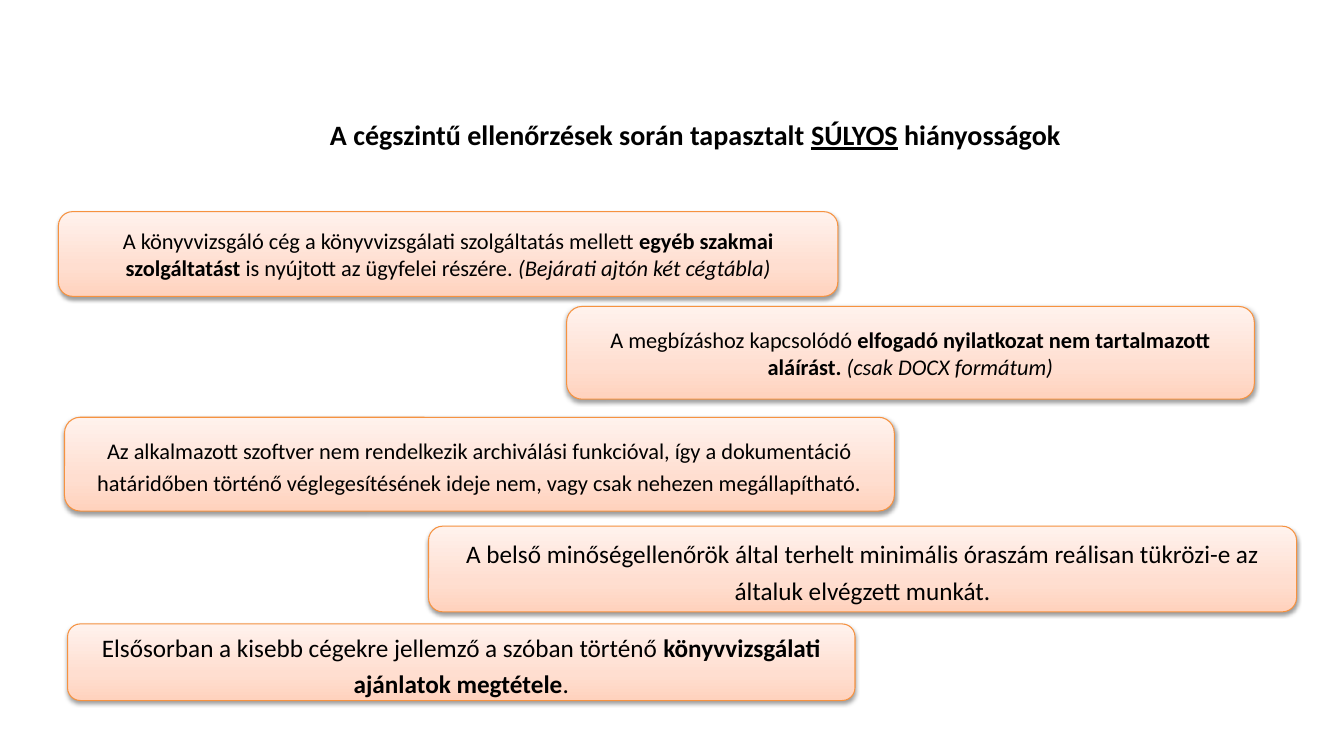
from lxml.etree import SubElement
from pptx import Presentation
from pptx.dml.color import RGBColor
from pptx.enum.shapes import MSO_SHAPE
from pptx.enum.text import MSO_ANCHOR, PP_ALIGN
from pptx.oxml.ns import qn
from pptx.util import Inches, Pt


def color(hex_code):
    return RGBColor.from_string(hex_code)


def write(shape, parts, size, spacing=1.0):
    """Fill a shape with one centred paragraph of (text, style) parts."""
    frame = shape.text_frame
    frame.word_wrap = True
    frame.vertical_anchor = MSO_ANCHOR.MIDDLE
    paragraph = frame.paragraphs[0]
    paragraph.alignment = PP_ALIGN.CENTER
    paragraph.line_spacing = spacing
    for text, style in parts:
        run = paragraph.add_run()
        run.text = text
        run.font.name = "Calibri"
        run.font.size = Pt(size)
        run.font.color.rgb = color("000000")
        run.font.bold = "b" in style
        run.font.italic = "i" in style
        run.font.underline = "u" in style


presentation = Presentation()
presentation.slide_width = Inches(13.33)
presentation.slide_height = Inches(7.5)
slide = presentation.slides.add_slide(presentation.slide_layouts[6])

# Title
title = slide.shapes.add_textbox(Inches(0.93), Inches(0.76), Inches(11.93), Inches(1.15))
write(title, [("A cégszintű ellenőrzések során tapasztalt ", "b"),
              ("SÚLYOS", "bu"), (" hiányosságok", "b")], 20)

# Findings, top to bottom: left, top, width, height, size, line spacing, parts
findings = [
    (0.58, 2.10, 7.73, 0.84, 16, 1.0, [
        ("A könyvvizsgáló cég a könyvvizsgálati szolgáltatás mellett ", ""),
        ("egyéb szakmai szolgáltatást ", "b"),
        ("is nyújtott az ügyfelei részére. ", ""),
        ("(Bejárati ajtón két cégtábla)", "i")]),
    (5.62, 3.04, 6.82, 0.92, 16, 1.0, [
        ("A megbízáshoz kapcsolódó ", ""),
        ("elfogadó nyilatkozat nem tartalmazott aláírást. ", "b"),
        ("(csak DOCX formátum)", "i")]),
    (0.64, 4.14, 8.23, 0.93, 16, 1.2, [
        ("Az alkalmazott szoftver nem rendelkezik archiválási funkcióval, így a "
         "dokumentáció határidőben történő véglegesítésének ideje nem, vagy csak "
         "nehezen megállapítható.", "")]),
    (4.25, 5.22, 8.61, 0.85, 18, 1.2, [
        ("A belső minőségellenőrök által terhelt minimális óraszám reálisan "
         "tükrözi-e az általuk elvégzett munkát.", "")]),
    (0.67, 6.19, 7.81, 0.76, 18, 1.2, [
        ("Elsősorban a kisebb cégekre jellemző a szóban történő ", ""),
        ("könyvvizsgálati ajánlatok megtétele", "b"), (".", "")]),
]
gradient_stops = [(0, "FFD2BD"), (35, "FFDED0"), (100, "FFF2ED")]

for left, top, width, height, size, spacing, parts in findings:
    finding = slide.shapes.add_shape(MSO_SHAPE.ROUNDED_RECTANGLE, Inches(left),
                                     Inches(top), Inches(width), Inches(height))
    finding.line.color.rgb = color("F69240")
    finding.line.width = Pt(0.75)
    write(finding, parts, size, spacing)

    # Peach gradient, darker at the bottom
    finding.fill.gradient()
    finding.fill.gradient_angle = 90
    properties = finding.element.spPr
    stop_list = properties.find(qn("a:gradFill")).find(qn("a:gsLst"))
    for default_stop in list(stop_list):
        stop_list.remove(default_stop)
    for percent, hex_code in gradient_stops:
        stop = SubElement(stop_list, qn("a:gs"), pos=str(percent * 1000))
        SubElement(stop, qn("a:srgbClr"), val=hex_code)

    # Soft shadow below
    finding.shadow.inherit = False
    shadow = SubElement(properties.find(qn("a:effectLst")), qn("a:outerShdw"),
                        blurRad=str(Pt(3.1)), dist=str(Pt(1.6)),
                        dir="5400000", rotWithShape="0")
    shade = SubElement(shadow, qn("a:srgbClr"), val="000000")
    SubElement(shade, qn("a:alpha"), val="38000")

presentation.save("out.pptx")
